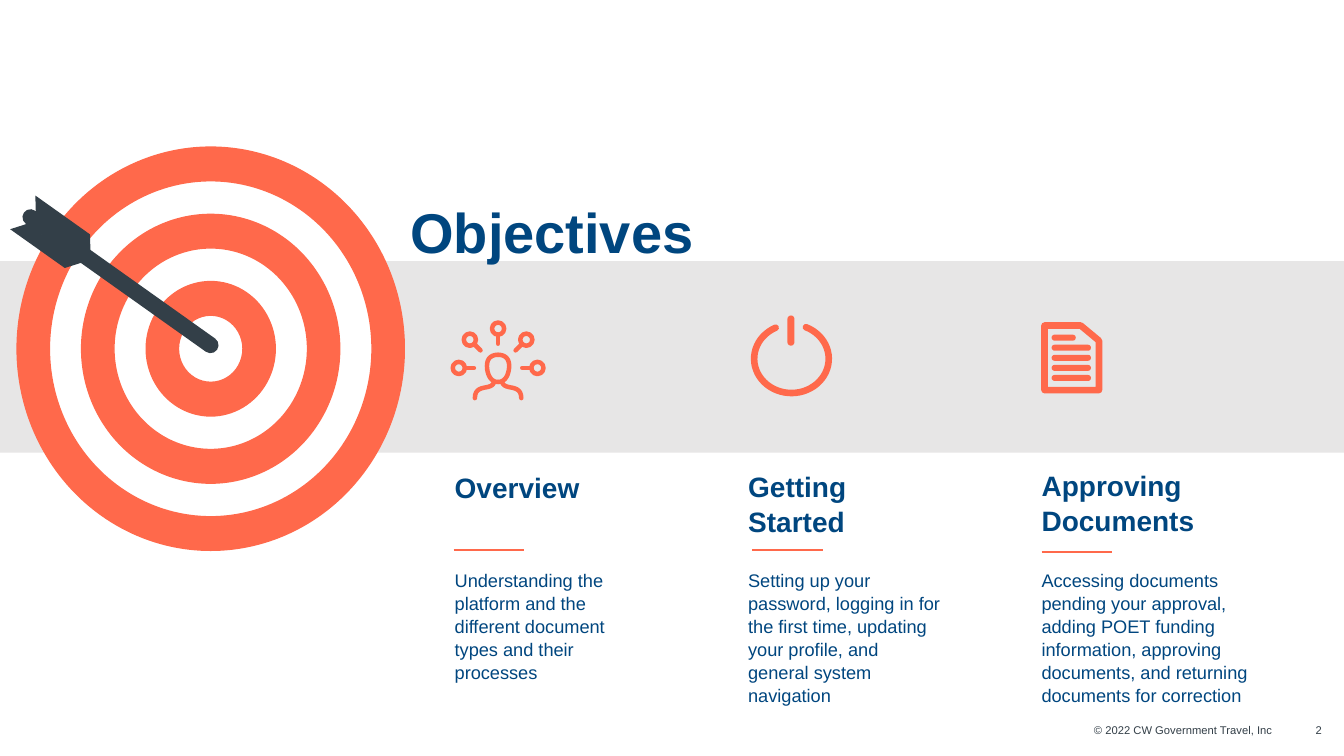
from dataclasses import dataclass
from math import cos, radians, sin

from lxml import etree
from pptx import Presentation
from pptx.dml.color import RGBColor
from pptx.enum.shapes import MSO_CONNECTOR, MSO_SHAPE
from pptx.enum.text import MSO_ANCHOR, PP_ALIGN
from pptx.oxml.ns import qn
from pptx.util import Inches, Pt

RECTANGLE, OVAL = MSO_SHAPE.RECTANGLE, MSO_SHAPE.OVAL
ROUNDED, PARALLELOGRAM = MSO_SHAPE.ROUNDED_RECTANGLE, MSO_SHAPE.PARALLELOGRAM
STRAIGHT, TOP = MSO_CONNECTOR.STRAIGHT, MSO_ANCHOR.TOP
LEFT, RIGHT = PP_ALIGN.LEFT, PP_ALIGN.RIGHT


@dataclass(frozen=True)
class Theme:
    """Colours, typeface, type sizes and line weights."""
    orange: str = "FF694B"
    navy: str = "00467F"
    slate: str = "333F48"
    band: str = "E7E6E6"
    white: str = "FFFFFF"
    font: str = "Arial"
    title: int = 40
    heading: int = 20
    body: int = 13
    footer: int = 8
    thin: float = 1
    rule: float = 1.5
    fine: float = 3.2
    bold: float = 4.7
    spacing: float = 1.05


THEME = Theme()
WIDTH, HEIGHT = 13.33, 7.5
COLUMN_LEFT, COLUMN_PITCH = 4.51, 2.91


def color(value):
    """Turn a hex string into a colour."""
    return RGBColor.from_string(value)


def add_text(slide, box, lines, size, ink=THEME.navy, bold=False, align=LEFT):
    """Place a text box with one paragraph per line."""
    frame = slide.shapes.add_textbox(*map(Inches, box)).text_frame
    frame_format = dict(word_wrap=True, vertical_anchor=TOP, margin_left=0,
                        margin_top=0, margin_right=0, margin_bottom=0)
    for name, value in frame_format.items():
        setattr(frame, name, value)
    for index, line in enumerate(lines):
        paragraph = frame.add_paragraph() if index else frame.paragraphs[0]
        paragraph.alignment, paragraph.line_spacing = align, THEME.spacing
        run = paragraph.add_run()
        run.text = line
        for name, value in dict(name=THEME.font, size=Pt(size), bold=bold).items():
            setattr(run.font, name, value)
        run.font.color.rgb = color(ink)


def paint(shape, fill=None, line=None, weight=THEME.thin):
    """Set the fill and outline of a shape and drop its shadow."""
    shape.shadow.inherit = False
    if fill:
        shape.fill.solid()
        shape.fill.fore_color.rgb = color(fill)
    else:
        shape.fill.background()
    if line:
        shape.line.color.rgb = color(line)
        shape.line.width = Pt(weight)
    else:
        shape.line.fill.background()
    return shape


def add_shape(slide, kind, box, **look):
    """Place a painted preset shape."""
    return paint(slide.shapes.add_shape(kind, *map(Inches, box)), **look)


def round_ends(shape):
    """Give a line round caps and joins."""
    outline = shape.line._get_or_add_ln()
    outline.set("cap", "rnd")
    etree.SubElement(outline, qn("a:round"))


def add_stroke(slide, points, weight, closed=False):
    """Draw an orange outline through points."""
    points = [(Inches(x), Inches(y)) for x, y in points]
    builder = slide.shapes.build_freeform(*points[0])
    builder.add_line_segments(points[1:], close=closed)
    round_ends(paint(builder.convert_to_shape(), line=THEME.orange, weight=weight))


def add_line(slide, start, end, weight):
    """Draw a straight orange line."""
    line = slide.shapes.add_connector(STRAIGHT, *map(Inches, (*start, *end)))
    line.line.color.rgb = color(THEME.orange)
    line.line.width = Pt(weight)
    etree.SubElement(line._element.spPr, qn("a:effectLst"))
    return line


def bezier(*controls, steps=12):
    """Sample a cubic curve."""
    shares = [step / steps for step in range(steps + 1)]
    return [tuple(sum(factor * point[axis] for factor, point in zip(
        ((1 - t) ** 3, 3 * t * (1 - t) ** 2, 3 * t * t * (1 - t), t ** 3), controls))
        for axis in (0, 1)) for t in shares]


def draw_target(slide, box, rings=6):
    """Draw concentric rings in alternating colours."""
    left, top, width, height = box
    for ring in range(rings):
        inset = ring / rings / 2
        add_shape(slide, OVAL, (left + width * inset, top + height * inset,
                                width * (1 - 2 * inset), height * (1 - 2 * inset)),
                  fill=THEME.white if ring % 2 else THEME.orange, line=THEME.orange)


def draw_arrow(slide, left, top):
    """Draw the dart from its shaft and two feathers."""
    parts = ((ROUNDED, (0, 0.56, 2.35, 0.16), 0.5, ()),
             (PARALLELOGRAM, (0.22, 0, 0.77, 0.14), 0.753, ("flipH",)),
             (PARALLELOGRAM, (0.05, 0.22, 0.77, 0.14), 0.753, ("flipH", "flipV")))
    for kind, (x, y, width, height), adjustment, flips in parts:
        part = add_shape(slide, kind, (left + x, top + y, width, height), fill=THEME.slate)
        part.adjustments[0] = adjustment
        part.rotation = 35.4
        for flip in flips:
            part._element.spPr.get_or_add_xfrm().set(flip, "1")


def draw_person(slide, left, top):
    """Draw a person linked to five nodes."""
    middle, radius = left + 0.47, 0.06
    nodes = ((0, 0.09, 90), (-0.39, 0.48, 0), (0.39, 0.48, 180),
             (-0.28, 0.2, 45), (0.28, 0.2, 135))
    for x, y, angle in nodes:
        x, y = middle + x, top + y
        add_shape(slide, OVAL, (x - radius, y - radius, 2 * radius, 2 * radius),
                  line=THEME.orange, weight=THEME.fine)
        ends = [(x + reach * cos(radians(angle)), y + reach * sin(radians(angle)))
                for reach in (0.08, 0.15)]
        round_ends(add_line(slide, *ends, THEME.fine))
    face = (bezier((0, 0.35), (-0.06, 0.35), (-0.11, 0.38), (-0.11, 0.46))
            + bezier((-0.11, 0.46), (-0.11, 0.53), (-0.08, 0.62), (0, 0.62)))
    shoulder = bezier((-0.23, 0.78), (-0.23, 0.63), (-0.06, 0.71), (-0.04, 0.62))
    for side in (1, -1):
        for outline in (face, shoulder):
            add_stroke(slide, [(middle + side * x, top + y) for x, y in outline], THEME.fine)


def draw_power(slide, left, top):
    """Draw a power symbol."""
    angles = [radians(angle) for angle in range(23, 338, 6)]
    add_stroke(slide, [(left + 0.4 + 0.37 * sin(angle), top + 0.43 - 0.34 * cos(angle))
                       for angle in angles], THEME.bold)
    bar = add_shape(slide, ROUNDED, (left + 0.36, top, 0.07, 0.3), fill=THEME.orange)
    bar.adjustments[0] = 0.5


def draw_document(slide, left, top):
    """Draw a page with a cut corner and five text bars."""
    corners = ((0.03, 0.03), (0.39, 0.03), (0.57, 0.18), (0.57, 0.67), (0.03, 0.67))
    add_stroke(slide, [(left + x, top + y) for x, y in corners], THEME.bold, closed=True)
    for row in range(5):
        bar = add_shape(slide, ROUNDED, (left + 0.1, top + 0.12 + 0.1 * row,
                                         0.39 if row else 0.24, 0.06), fill=THEME.orange)
        bar.adjustments[0] = 0.5


TOPICS = (
    (draw_person, (-0.04, 3.17), ["Overview"], 4.65, 1.93, (-0.01, 5.46),
     "Understanding the platform and the different document types and their processes"),
    (draw_power, (0.03, 3.13), ["Getting", "Started"], 4.64, 1.92, (0.04, 5.46),
     "Setting up your password, logging in for the first time, updating your profile, "
     "and general system navigation"),
    (draw_document, (0, 3.2), ["Approving Documents"], 4.63, 2.08, (0, 5.48),
     "Accessing documents pending your approval, adding POET funding information, "
     "approving documents, and returning documents for correction"),
)


def draw_topic(slide, left, topic):
    """Draw one column: icon, heading, rule and description."""
    icon, (icon_x, icon_y), heading, top, width, (rule_x, rule_y), description = topic
    icon(slide, left + icon_x, icon_y)
    add_text(slide, (left, top, 2.08, 0.66), heading, THEME.heading, bold=True)
    rule_left = left + rule_x
    add_line(slide, (rule_left, rule_y), (rule_left + 0.7, rule_y), THEME.rule)
    add_text(slide, (left, 5.64, width, 1.44), [description], THEME.body)


def draw_footer(slide, top):
    """Place the copyright line and the page number."""
    for left, width, words in ((8.38, 4.24, "© 2022 CW Government Travel, Inc"),
                               (12.88, 0.23, "2")):
        add_text(slide, (left, top, width, 0.14), [words], THEME.footer,
                 ink=THEME.slate, align=RIGHT)


def main():
    """Build and save the objectives slide."""
    presentation = Presentation()
    presentation.slide_width, presentation.slide_height = Inches(WIDTH), Inches(HEIGHT)
    slide = presentation.slides.add_slide(presentation.slide_layouts[6])
    add_shape(slide, RECTANGLE, (0, 2.59, WIDTH, 1.9), fill=THEME.band)
    draw_target(slide, (0.17, 1.46, 3.84, 4))
    draw_arrow(slide, 0.02, 2.15)
    add_text(slide, (4.07, 1.93, 3.92, 0.64), ["Objectives"], THEME.title, bold=True)
    for column, topic in enumerate(TOPICS):
        draw_topic(slide, COLUMN_LEFT + column * COLUMN_PITCH, topic)
    draw_footer(slide, 7.17)
    presentation.save("out.pptx")


if __name__ == "__main__":
    main()
